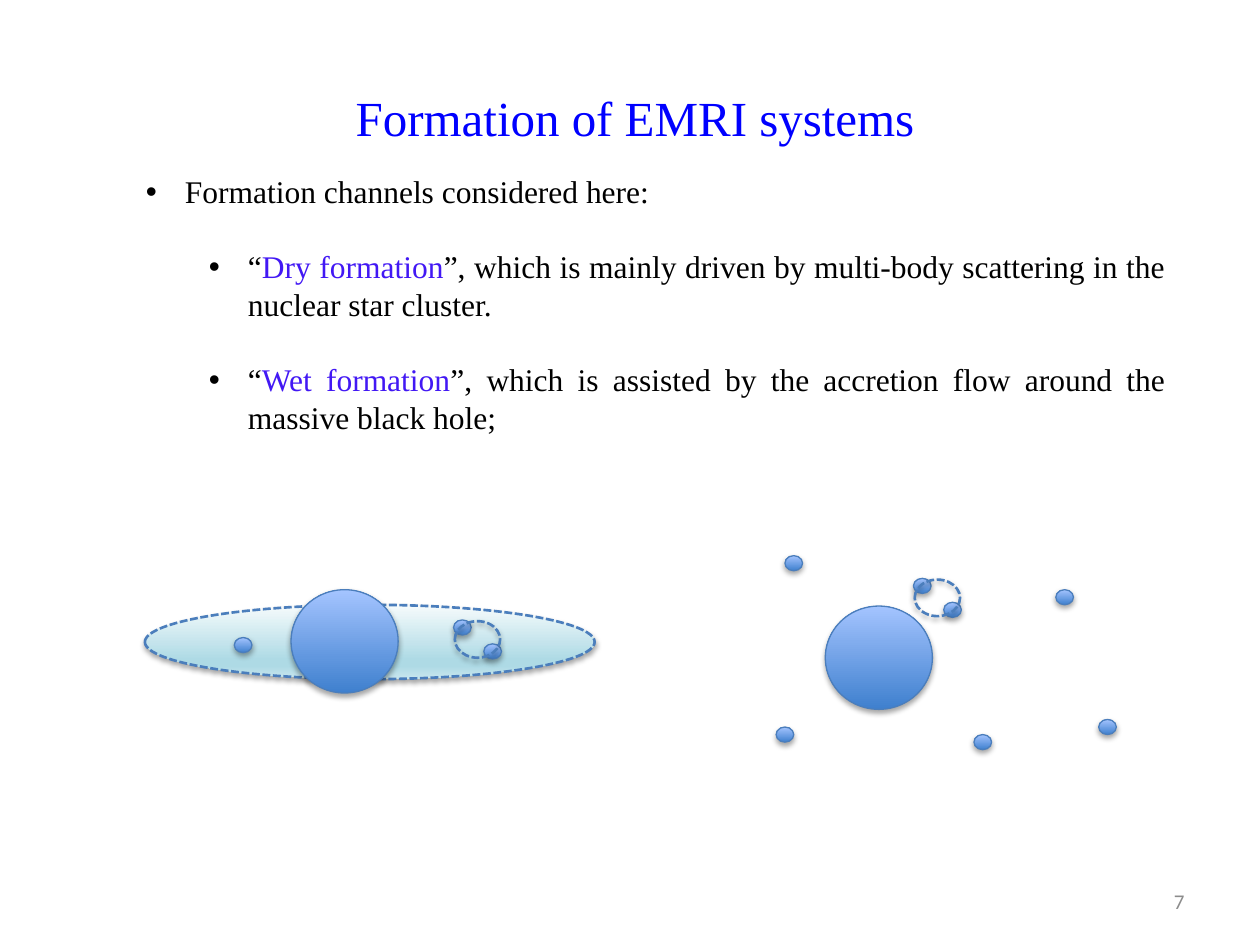
from dataclasses import dataclass

from lxml import etree
from pptx import Presentation
from pptx import util as u
from pptx.dml.color import RGBColor
from pptx.enum import dml, shapes, text
from pptx.oxml import parse_xml
from pptx.oxml.ns import nsdecls, qn


@dataclass(frozen=True)
class Theme:
    serif: str = "Times New Roman"
    sans: str = "Calibri"
    title: str = "0000FF"
    body: str = "000000"
    accent: str = "4218F4"
    muted: str = "8C8C8C"
    outline: str = "4B7EBC"
    body_gradient: tuple = ((0, "3F80CE"), (100, "A4C4FF"))
    disc_gradient: tuple = ((0, "F6FBFC"), (74, "AEDAE5"), (83, "AEDAE5"), (100, "C9E6EE"))
    title_size: int = 28
    body_size: int = 18
    number_size: int = 12
    line_pitch: float = 21.5


class SlideBuilder:
    def __init__(self, slide, theme):
        self.slide = slide
        self.theme = theme

    def text_box(self, left, top, width, height, anchor=text.MSO_ANCHOR.TOP):
        box = self.slide.shapes.add_textbox(*map(u.Inches, (left, top, width, height)))
        box.text_frame.word_wrap = True
        box.text_frame.vertical_anchor = anchor
        return box.text_frame

    def style_run(self, run, size, font, color):
        run.font.size = u.Pt(size)
        run.font.name = font
        run.font.color.rgb = RGBColor.from_string(color)

    def label(self, words, place, size, font, color, alignment):
        frame = self.text_box(*place, anchor=text.MSO_ANCHOR.MIDDLE)
        frame.text = words
        paragraph = frame.paragraphs[0]
        paragraph.alignment = alignment
        self.style_run(paragraph.runs[0], size, font, color)

    def bullets(self, items, place):
        """Each item is (level, [(words, color), ...])."""
        theme = self.theme
        frame = self.text_box(*place)
        for index, (level, parts) in enumerate(items):
            paragraph = frame.add_paragraph() if index else frame.paragraphs[0]
            paragraph.level = level
            paragraph.alignment = text.PP_ALIGN.JUSTIFY
            paragraph.line_spacing = u.Pt(theme.line_pitch)
            if index:
                paragraph.space_before = u.Pt(theme.line_pitch)
            properties = paragraph._p.get_or_add_pPr()
            properties.set("marL", str(u.Inches(0.31 + 0.5 * level)))
            properties.set("indent", str(u.Inches(-0.31)))
            etree.SubElement(properties, qn("a:buFont")).set("typeface", "Arial")
            etree.SubElement(properties, qn("a:buChar")).set("char", "•")
            for words, color in parts:
                run = paragraph.add_run()
                run.text = words
                self.style_run(run, theme.body_size, theme.serif, color)

    def ellipse(self, left, top, width, height, gradient=None, angle=270, dashed=False):
        shape = self.slide.shapes.add_shape(
            shapes.MSO_SHAPE.OVAL, *map(u.Inches, (left, top, width, height)))
        shape.fill.background()
        shape.line.color.rgb = RGBColor.from_string(self.theme.outline)
        shape.line.width = u.Pt(1.5 if dashed else 0.75)
        if dashed:
            shape.line.dash_style = dml.MSO_LINE.SQUARE_DOT
        if gradient:
            self.gradient_fill(shape, gradient, angle)
        self.soft_shadow(shape)

    def gradient_fill(self, shape, stops, angle):
        stop_xml = "".join(
            f'<a:gs pos="{position * 1000}"><a:srgbClr val="{color}"/></a:gs>'
            for position, color in stops)
        fill = parse_xml(
            f'<a:gradFill {nsdecls("a")} rotWithShape="1"><a:gsLst>{stop_xml}</a:gsLst>'
            f'<a:lin ang="{angle * 60000}" scaled="0"/></a:gradFill>')
        properties = shape._element.spPr
        properties.replace(properties.find(qn("a:noFill")), fill)

    def soft_shadow(self, shape):
        shape.shadow.inherit = False
        shape._element.spPr.find(qn("a:effectLst")).append(parse_xml(
            f'<a:outerShdw {nsdecls("a")} blurRad="{u.Pt(3.1)}" dist="{u.Pt(1.8)}" '
            'dir="5400000" rotWithShape="0"><a:srgbClr val="000000">'
            '<a:alpha val="35000"/></a:srgbClr></a:outerShdw>'))

    def black_hole(self, left, top):
        self.ellipse(left, top, 0.85, 0.82, self.theme.body_gradient)

    def small_body(self, left, top):
        self.ellipse(left, top, 0.14, 0.12, self.theme.body_gradient)

    def binary(self, left, top):
        self.small_body(left, top)
        self.small_body(left + 0.24, top + 0.19)
        self.ellipse(left + 0.01, top + 0.01, 0.36, 0.29, dashed=True)


def main():
    presentation = Presentation()
    presentation.slide_width = u.Inches(10)
    presentation.slide_height = u.Inches(7.5)
    theme = Theme()
    slide = presentation.slides.add_slide(presentation.slide_layouts[6])
    builder = SlideBuilder(slide, theme)

    # Accretion disc, behind everything else
    builder.ellipse(1.15, 4.8, 3.57, 0.59, theme.disc_gradient, angle=90, dashed=True)

    # Title and bullets
    builder.label("Formation of EMRI systems", (0.43, 0.3, 9.22, 1.25),
                  theme.title_size, theme.serif, theme.title, text.PP_ALIGN.CENTER)
    builder.bullets([
        (0, [("Formation channels considered here:", theme.body)]),
        (1, [("“", theme.body), ("Dry formation", theme.accent),
             ("”, which is mainly driven by multi-body scattering in the "
              "nuclear star cluster.", theme.body)]),
        (1, [("“", theme.body), ("Wet formation", theme.accent),
             ("”, which is assisted by the accretion flow around the "
              "massive black hole;", theme.body)]),
    ], (1.06, 1.32, 8.29, 2.83))

    # Wet formation: bodies inside the disc
    builder.black_hole(2.31, 4.68)
    builder.binary(3.6, 4.92)
    builder.small_body(1.86, 5.06)

    # Dry formation: bodies scattered in the star cluster
    builder.black_hole(6.55, 4.81)
    builder.binary(7.25, 4.59)
    for left, top in ((8.38, 4.68), (6.23, 4.41), (6.16, 5.77), (7.73, 5.83), (8.72, 5.71)):
        builder.small_body(left, top)

    # Slide number
    builder.label("7", (7.17, 6.95, 2.33, 0.4),
                  theme.number_size, theme.sans, theme.muted, text.PP_ALIGN.RIGHT)

    presentation.save("out.pptx")


if __name__ == "__main__":
    main()
